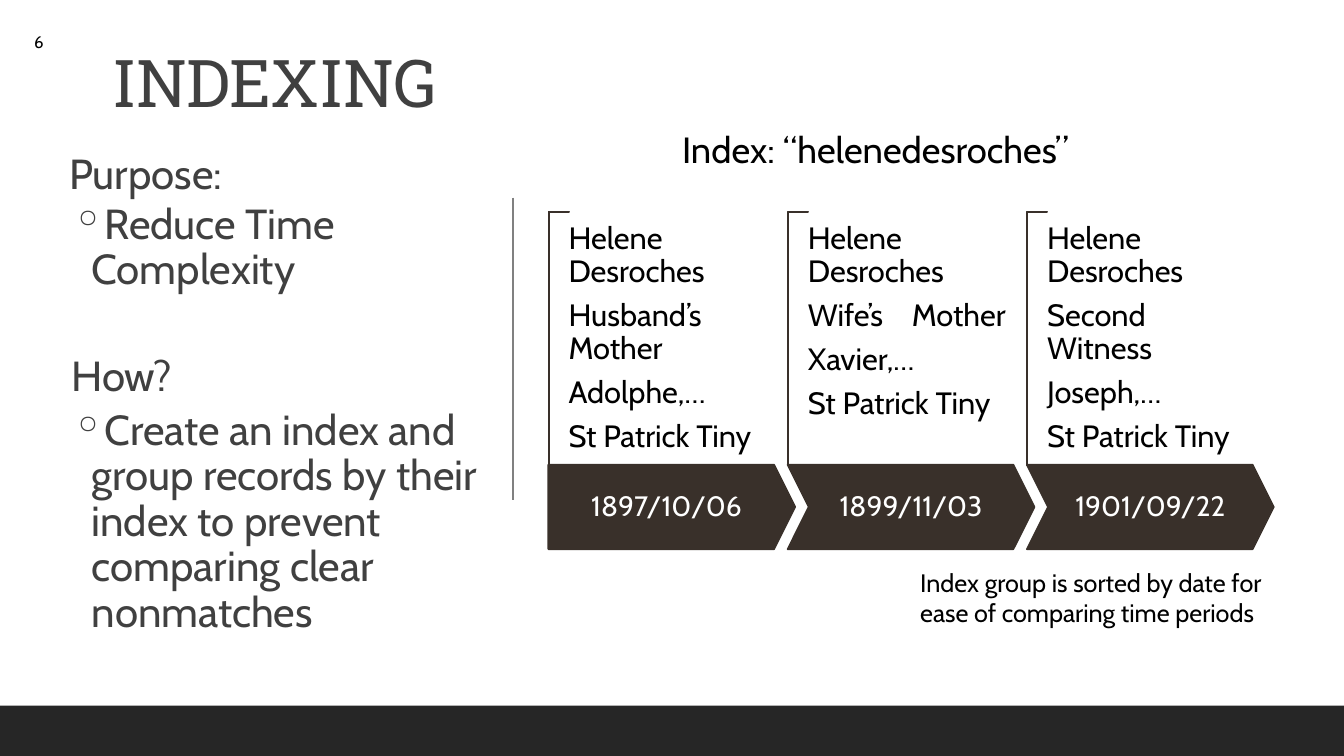
from dataclasses import dataclass

from lxml import etree
from pptx import Presentation
from pptx.dml.color import RGBColor
from pptx.enum.shapes import MSO_CONNECTOR, MSO_SHAPE
from pptx.enum.text import MSO_ANCHOR, MSO_AUTO_SIZE, PP_ALIGN
from pptx.oxml.ns import qn
from pptx.util import Cm, Pt

RECTANGLE = MSO_SHAPE.RECTANGLE
CORNER = MSO_SHAPE.CORNER
PENTAGON = MSO_SHAPE.PENTAGON
CHEVRON = MSO_SHAPE.CHEVRON
STRAIGHT = MSO_CONNECTOR.STRAIGHT
LEFT = PP_ALIGN.LEFT
CENTER = PP_ALIGN.CENTER
TOP = MSO_ANCHOR.TOP
MIDDLE = MSO_ANCHOR.MIDDLE
FIXED_SIZE = MSO_AUTO_SIZE.NONE


@dataclass(frozen=True)
class Theme:
    heading_font: str = "Roboto Slab"
    body_font: str = "Cabin"
    heading: str = "404040"
    text: str = "000000"
    light: str = "FFFFFF"
    dark: str = "39302A"
    bracket: str = "E5DEDB"
    divider: str = "808080"
    footer: str = "262626"
    title_size: float = 47
    body_size: float = 30
    index_size: float = 26
    detail_size: float = 22
    date_size: float = 20
    note_size: float = 18
    number_size: float = 12


class SlideBuilder:
    def __init__(self, page, theme):
        self.page = page
        self.theme = theme

    def font(self, para, size, color, name=None):
        para.font.name = name or self.theme.body_font
        para.font.size = Pt(size)
        para.font.color.rgb = RGBColor.from_string(color)

    def frame(self, shape, insets, anchor=TOP, wrap=True):
        frame = shape.text_frame
        frame.word_wrap = wrap
        frame.auto_size = FIXED_SIZE
        frame.vertical_anchor = anchor
        frame.margin_left = frame.margin_right = Cm(insets[0])
        frame.margin_top = frame.margin_bottom = Cm(insets[1])
        return frame

    def paragraph(self, frame, text, size, color, align=LEFT, spacing=1.0,
                  before=0, after=0, margin=0, bullet=None, tab=None):
        para = frame.paragraphs[0]
        if para.text:
            para = frame.add_paragraph()
        para.text = text
        properties = para._p.get_or_add_pPr()
        if margin:
            properties.set("marL", str(Cm(margin)))
        if bullet:
            properties.set("indent", str(-Cm(0.51)))
            etree.SubElement(properties, qn("a:buChar")).set("char", bullet)
        if tab:
            stops = etree.SubElement(properties, qn("a:tabLst"))
            etree.SubElement(stops, qn("a:tab"), pos=str(Cm(tab)), algn="l")
        para.alignment = align
        para.line_spacing = spacing
        para.space_before = Pt(before)
        para.space_after = Pt(after)
        self.font(para, size, color)

    def title(self, text, left, top, width, height):
        shape = self.page.shapes.title
        shape.left, shape.top = Cm(left), Cm(top)
        shape.width, shape.height = Cm(width), Cm(height)
        frame = self.frame(shape, (0.25, 0.13), MIDDLE)
        frame.text = text
        para = frame.paragraphs[0]
        para.alignment = CENTER
        para.line_spacing = 0.9
        self.font(para, self.theme.title_size, self.theme.heading,
                  self.theme.heading_font)
        para.font._element.set("spc", "-50")

    def text_box(self, left, top, width, height, insets=(0.25, 0.13), wrap=True):
        box = self.page.shapes.add_textbox(Cm(left), Cm(top), Cm(width), Cm(height))
        return self.frame(box, insets, wrap=wrap)

    def shape(self, kind, left, top, width, height, fill, line=None, adjustments=()):
        shape = self.page.shapes.add_shape(
            kind, Cm(left), Cm(top), Cm(width), Cm(height))
        shape.shadow.inherit = False
        shape.fill.solid()
        shape.fill.fore_color.rgb = RGBColor.from_string(fill)
        if line:
            shape.line.color.rgb = RGBColor.from_string(line)
            shape.line.width = Pt(1.25)
        else:
            shape.line.fill.background()
        for position, value in enumerate(adjustments):
            shape.adjustments[position] = value
        return shape

    def vertical_line(self, x, top, bottom):
        line = self.page.shapes.add_connector(
            STRAIGHT, Cm(x), Cm(top), Cm(x), Cm(bottom))
        line.line.color.rgb = RGBColor.from_string(self.theme.divider)
        line.line.width = Pt(1)
        etree.SubElement(line._element.spPr, qn("a:effectLst"))

    def period(self, kind, left, date, details):
        theme = self.theme
        length, depth, middle = 6.4, 0.51, 8.53
        bracket = self.shape(CORNER, left + (depth - length) / 2, middle - depth / 2,
                             length, depth, theme.bracket, theme.dark, (0.01, 0.01))
        bracket.rotation = 90
        arrow = self.shape(kind, left, 11.71, 6.22, 2.13, theme.dark, theme.dark, (0.25,))
        self.paragraph(self.frame(arrow, (0.36, 0.71), MIDDLE), date,
                       theme.date_size, theme.light, CENTER, 0.9)
        frame = self.text_box(left + depth, 5.61, 5.05, 5.23, (0, 0))
        for detail in details:
            self.paragraph(frame, detail, theme.detail_size, theme.text, spacing=0.9,
                           after=7.7, tab=2.62 if "\t" in detail else None)


PERIODS = [
    (PENTAGON, "1897/10/06", ["Husband’s Mother", "Adolphe,…"]),
    (CHEVRON, "1899/11/03", ["Wife’s\tMother", "Xavier,…"]),
    (CHEVRON, "1901/09/22", ["Second Witness", "Joseph,…"]),
]

OUTLINE = [
    ("Purpose:", dict(before=12, after=2, margin=0.5)),
    ("Reduce Time Complexity",
     dict(spacing=0.9, before=2, after=4, margin=1.07, bullet="◦")),
    ("How?", dict(spacing=0.9, before=40, after=4, margin=0.56)),
    ("Create an index and group records by their index to prevent comparing "
     "clear nonmatches",
     dict(spacing=0.9, before=2, after=4, margin=1.07, bullet="◦")),
]


def main():
    deck = Presentation()
    deck.slide_width, deck.slide_height = Cm(33.87), Cm(19.05)
    theme = Theme()
    builder = SlideBuilder(deck.slides.add_slide(deck.slide_layouts[5]), theme)

    builder.title("INDEXING", 1.8, 1.12, 10.24, 2.08)
    builder.vertical_line(12.93, 4.98, 12.6)
    builder.shape(RECTANGLE, 0, 17.78, 33.87, 1.27, theme.footer)

    for position, (kind, date, middle_lines) in enumerate(PERIODS):
        builder.period(kind, 13.82 + 6.03 * position, date,
                       ["Helene Desroches", *middle_lines, "St Patrick Tiny"])

    outline = builder.text_box(1.24, 3.58, 11.23, 13.74, (0, 0.13))
    for text, layout in OUTLINE:
        builder.paragraph(outline, text, theme.body_size, theme.heading, **layout)

    index = builder.text_box(16.94, 3.07, 10.49, 1.37, wrap=False)
    builder.paragraph(index, "Index: “helenedesroches”", theme.index_size, theme.text)
    note = builder.text_box(22.94, 14.17, 9.17, 1.8)
    builder.paragraph(note, "Index group is sorted by date for ease of comparing "
                      "time periods", theme.note_size, theme.text)
    number = builder.text_box(0.61, 0.66, 0.76, 0.76, wrap=False)
    builder.paragraph(number, "6", theme.number_size, theme.text)

    deck.save("out.pptx")


if __name__ == "__main__":
    main()
